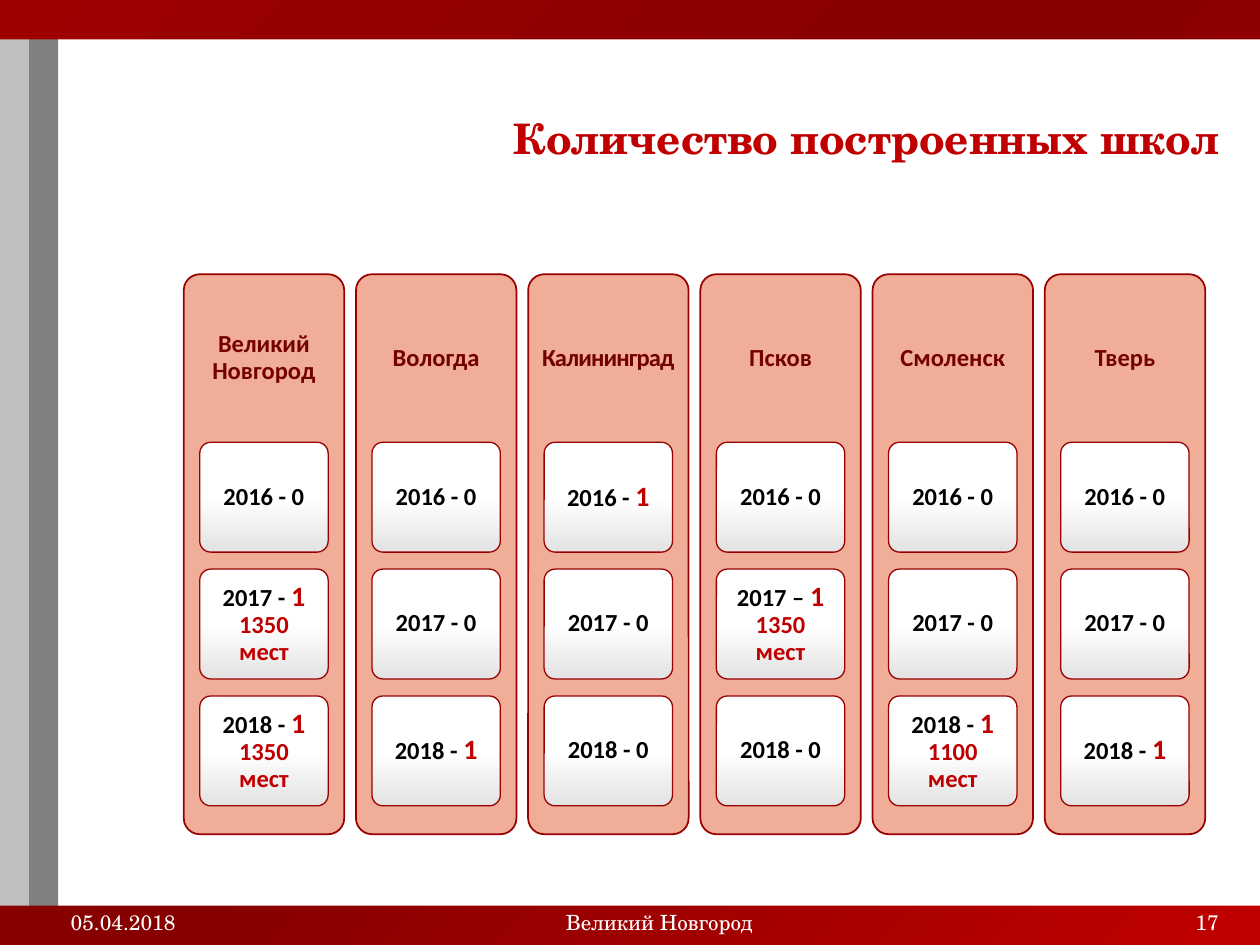
from lxml import etree
from pptx import Presentation
from pptx.dml.color import RGBColor
from pptx.enum.shapes import MSO_SHAPE
from pptx.enum.text import MSO_ANCHOR, PP_ALIGN
from pptx.oxml import parse_xml
from pptx.oxml.ns import nsdecls, qn
from pptx.util import Pt

RECT, ROUND = MSO_SHAPE.RECTANGLE, MSO_SHAPE.ROUNDED_RECTANGLE
LEFT, CENTER, RIGHT = PP_ALIGN.LEFT, PP_ALIGN.CENTER, PP_ALIGN.RIGHT
TOP, MIDDLE = MSO_ANCHOR.TOP, MSO_ANCHOR.MIDDLE
SERIF, SANS = "TeX Gyre Schola", "Calibri"
RED, BORDER, BLACK = "C00000", "990000", "000000"

DOWN = '<a:lin ang="5400000" scaled="0"/>'
FROM_CORNER = '<a:path path="circle"><a:fillToRect l="100000" t="100000"/></a:path>'

COLUMNS = [
    ("Великий Новгород", [("2016 - 0",), ("2017 - ", "1", "1350", "мест"),
                          ("2018 - ", "1", "1350", "мест")]),
    ("Вологда", [("2016 - 0",), ("2017 - 0",), ("2018 - ", "1")]),
    ("Калининград", [("2016 - ", "1"), ("2017 - 0",), ("2018 - 0",)]),
    ("Псков", [("2016 - 0",), ("2017 – ", "1", "1350", "мест"), ("2018 - 0",)]),
    ("Смоленск", [("2016 - 0",), ("2017 - 0",), ("2018 - ", "1", "1100", "мест")]),
    ("Тверь", [("2016 - 0",), ("2017 - 0",), ("2018 - ", "1")]),
]


def rgb(value):
    return RGBColor.from_string(value)


def set_gradient(fill, root, stops, shade):
    fill.gradient()
    old = root.find(".//" + qn("a:gradFill"))
    new = parse_xml(f'<a:gradFill {nsdecls("a")} rotWithShape="1"><a:gsLst/>{shade}</a:gradFill>')
    for pos, color in stops:
        gs = etree.SubElement(new[0], qn("a:gs"), pos=str(pos * 1000))
        etree.SubElement(gs, qn("a:srgbClr"), val=color)
    old.getparent().replace(old, new)


def add_box(s, kind, x, y, w, h, color=None, line=None, line_width=1):
    sp = s.shapes.add_shape(kind, Pt(x), Pt(y), Pt(w), Pt(h))
    sp.shadow.inherit = False
    if kind == ROUND:
        sp.adjustments[0] = 0.1
    if color:
        sp.fill.solid()
        sp.fill.fore_color.rgb = rgb(color)
    if line:
        sp.line.color.rgb = rgb(line)
        sp.line.width = Pt(line_width)
    else:
        sp.line.fill.background()
    return sp


def setup_text(sp, align, anchor, inset_x, inset_y):
    tf = sp.text_frame
    tf.word_wrap = True
    tf.vertical_anchor = anchor
    tf.margin_left = tf.margin_right = Pt(inset_x)
    tf.margin_top = tf.margin_bottom = Pt(inset_y)
    p = tf.paragraphs[0]
    p.alignment = align
    return p


def add_run(p, text, size, color, font, bold=True):
    r = p.add_run()
    r.text = text
    r.font.size = Pt(size)
    r.font.name = font
    r.font.bold = bold
    r.font.color.rgb = rgb(color)
    return r


def add_frame(s, x, y, w, h):
    strip = 16.6
    add_box(s, RECT, x + 2 * strip, y, w - 2 * strip, h, "FFFFFF")
    for i, color in enumerate(["BFBFBF", "808080"]):
        add_box(s, RECT, x + i * strip, y, strip, h, color)


def add_title(s, x, y, w, h):
    sp = s.shapes.title
    s.shapes._spTree.append(sp._element)
    sp.left, sp.top, sp.width, sp.height = Pt(x), Pt(y), Pt(w), Pt(h)
    p = setup_text(sp, RIGHT, MIDDLE, 7.2, 3.6)
    add_run(p, "Количество построенных школ", 24, RED, SERIF)


def add_footer(s, x, y, w, h):
    parts = [(0, 168, LEFT, "05.04.2018"),
             (229.5, 228, CENTER, "Великий Новгород"),
             (w - 168, 168, RIGHT, "17")]
    for dx, width, align, text in parts:
        sp = s.shapes.add_textbox(Pt(x + dx), Pt(y), Pt(width), Pt(h))
        p = setup_text(sp, align, TOP, 7.2, 3.6)
        add_run(p, text, 12, "FFFFFF", SERIF, False)


def add_card(s, x, y, w, h, label, count=None, *places):
    sp = add_box(s, ROUND, x, y, w, h, line=BORDER, line_width=0.75)
    set_gradient(sp.fill, sp._element, [(0, "FFFFFF"), (50, "FFFFFF"), (100, "E3E3E3")], DOWN)
    p = setup_text(sp, CENTER, MIDDLE, 2.8, 2.1)
    p.line_spacing = 0.9
    add_run(p, label, 14, BLACK, SANS)
    if count:
        add_run(p, count, 16, RED, SANS)
    for text in places:
        p.add_line_break()
        add_run(p, text, 14, RED, SANS)


def add_column(s, x, y, w, h, city, cards):
    add_box(s, ROUND, x, y, w, h, "F0AD98", BORDER)
    sp = s.shapes.add_textbox(Pt(x + 2.7), Pt(y + 2.7), Pt(w - 5.4), Pt(90.6))
    p = setup_text(sp, CENTER, MIDDLE, 4.2, 4.2)
    p.line_spacing = 0.9
    r = add_run(p, city, 14, "740000", SANS)
    if len(max(city.split(), key=len)) > 10:
        r.font._element.set("spc", "-50")
    for i, card in enumerate(cards):
        add_card(s, x + w / 10, y + 96 + i * 72.5, w * 0.8, 62.8, *card)


def add_columns(s, x, y, w, h):
    gap = 6.7
    width = (w - gap * (len(COLUMNS) - 1)) / len(COLUMNS)
    for i, (city, cards) in enumerate(COLUMNS):
        add_column(s, x + i * (width + gap), y, width, h, city, cards)


def main():
    prs = Presentation()
    prs.slide_width, prs.slide_height = Pt(720), Pt(540)
    s = prs.slides.add_slide(prs.slide_layouts[5])
    set_gradient(s.background.fill, s._element,
                 [(0, RED), (50, "860000"), (100, "9E0000")], FROM_CORNER)
    add_frame(s, 0, 22.5, 720, 495)
    add_footer(s, 33.3, 516, 670.2, 21)
    add_title(s, 144.7, 31.5, 559.5, 94.5)
    add_columns(s, 105, 156.7, 583.7, 320)
    prs.save("out.pptx")


if __name__ == "__main__":
    main()
